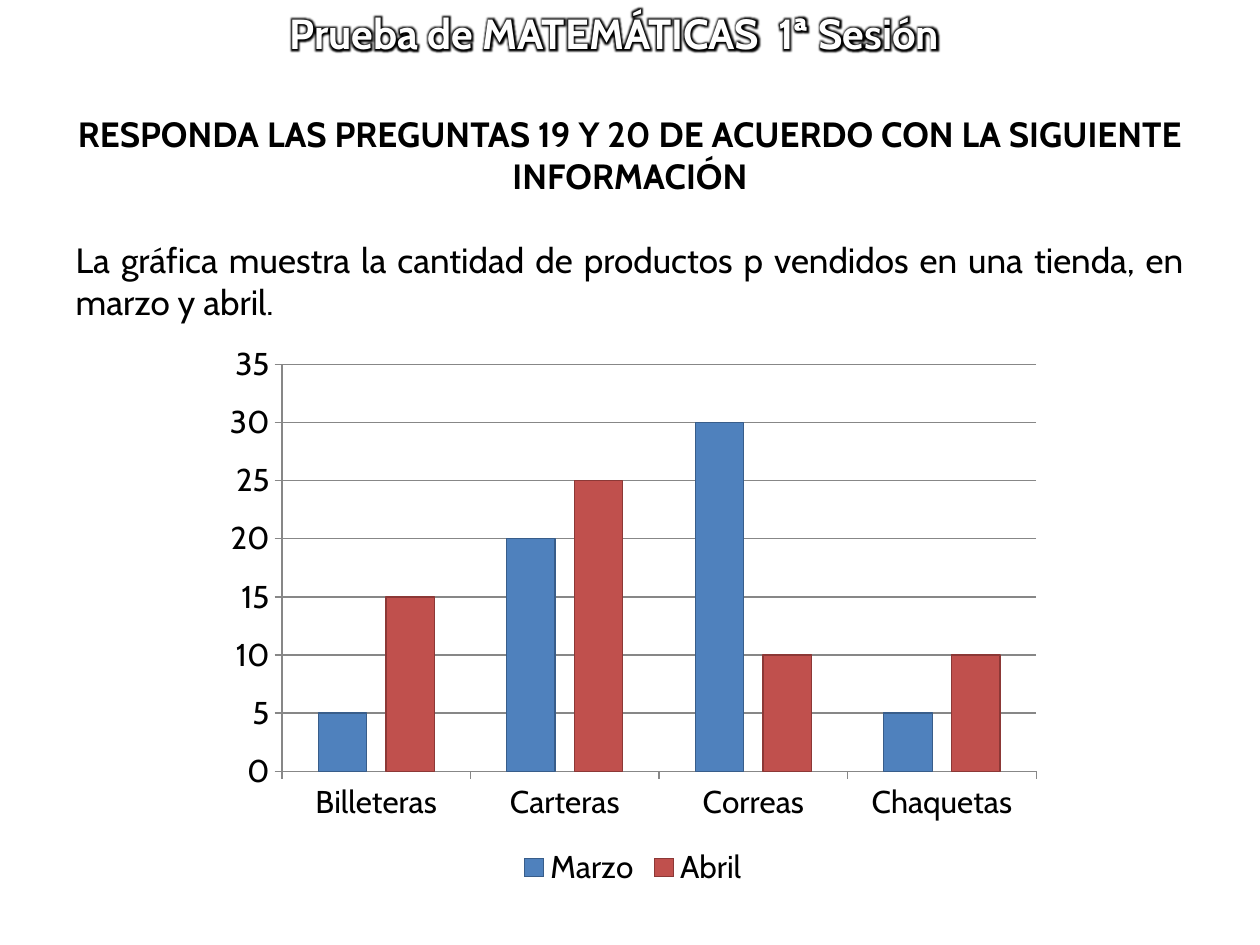
from lxml.etree import SubElement
from pptx import Presentation
from pptx.chart.data import CategoryChartData as ChartData
from pptx.dml.color import RGBColor
from pptx.enum.chart import XL_CHART_TYPE as ChartType
from pptx.enum.chart import XL_LEGEND_POSITION as LegendPosition
from pptx.enum.chart import XL_TICK_MARK as TickMark
from pptx.enum.text import MSO_ANCHOR as Anchor
from pptx.enum.text import MSO_AUTO_SIZE as AutoSize
from pptx.enum.text import PP_ALIGN as Align
from pptx.oxml import parse_xml
from pptx.oxml.ns import nsdecls, qn
from pptx.util import Emu, Pt

PX_PER_INCH = 126
FONT = "Cabin"
COLORS = {
    "white": "FFFFFF",
    "black": "000000",
    "grid": "878787",
    "march": "4F81BD",
    "march_edge": "385D8A",
    "april": "C0504D",
    "april_edge": "8C3836",
}
PRODUCTS = ["Billeteras", "Carteras", "Correas", "Chaquetas"]
SALES = [
    ("Marzo", [5, 20, 30, 5], "march"),
    ("Abril", [15, 25, 10, 10], "april"),
]


def px(length):
    return Emu(round(length * 914400 / PX_PER_INCH))


def color(name):
    return RGBColor.from_string(COLORS[name])


def format_font(font, size, color_name, bold=False):
    font.size = Pt(size)
    font.bold = bold
    font.color.rgb = color(color_name)
    font.name = FONT


def place(shape, left, top, width, height):
    shape.left, shape.top = px(left), px(top)
    shape.width, shape.height = px(width), px(height)


def prepare_frame(shape, anchor):
    frame = shape.text_frame
    frame.word_wrap = True
    frame.auto_size = AutoSize.NONE
    frame.vertical_anchor = anchor
    return frame


def add_run(paragraph, text, size, color_name, bold=False):
    run = paragraph.add_run()
    run.text = text
    format_font(run.font, size, color_name, bold)
    return run


def add_glow(run, radius, color_name):
    """Surround the letters of a run with a glow; radius in points."""
    glow = parse_xml(
        f'<a:effectLst {nsdecls("a")}><a:glow rad="{Pt(radius)}">'
        f'<a:srgbClr val="{COLORS[color_name]}"/></a:glow></a:effectLst>'
    )
    run.font._element.find(qn("a:solidFill")).addnext(glow)


def remove_bullet(paragraph):
    properties = paragraph._p.get_or_add_pPr()
    properties.set("marL", "0")
    properties.set("indent", "0")
    SubElement(properties, qn("a:buNone"))


def fill_title(shape):
    place(shape, 277, -11, 958, 87)
    paragraph = prepare_frame(shape, Anchor.MIDDLE).paragraphs[0]
    paragraph.alignment = Align.LEFT
    run = add_run(paragraph, "Prueba de MATEMÁTICAS  1ª Sesión", 24, "white", True)
    add_glow(run, 5, "black")


def fill_body(shape):
    place(shape, 63, 106, 1134, 238)
    frame = prepare_frame(shape, Anchor.TOP)
    instruction, statement = frame.paragraphs[0], frame.add_paragraph()
    content = [
        (instruction, Align.CENTER, 0, True,
         "RESPONDA LAS PREGUNTAS 19 Y 20 DE ACUERDO CON LA SIGUIENTE INFORMACIÓN"),
        (statement, Align.JUSTIFY, 24, False,
         "La gráfica muestra la cantidad de productos p vendidos en una tienda, "
         "en marzo y abril."),
    ]
    for paragraph, alignment, space_before, bold, text in content:
        remove_bullet(paragraph)
        paragraph.alignment = alignment
        paragraph.space_before = Pt(space_before)
        add_run(paragraph, text, 20, "black", bold)


def format_line(line, color_name):
    line.color.rgb = color(color_name)
    line.width = Pt(0.75)


def format_axis(axis):
    axis.major_tick_mark = TickMark.OUTSIDE
    axis.minor_tick_mark = TickMark.NONE
    format_line(axis.format.line, "grid")


def add_sales_chart(slide):
    data = ChartData()
    data.categories = PRODUCTS
    for month, values, _ in SALES:
        data.add_series(month, values)
    chart = slide.shapes.add_chart(
        ChartType.COLUMN_CLUSTERED, px(213), px(334), px(840), px(559), data
    ).chart
    format_font(chart.font, 18, "black")
    chart.has_title = False
    chart.has_legend = True
    chart.legend.position = LegendPosition.BOTTOM
    chart.legend.include_in_layout = False

    format_axis(chart.category_axis)
    value_axis = chart.value_axis
    format_axis(value_axis)
    value_axis.minimum_scale, value_axis.maximum_scale = 0, 35
    value_axis.major_unit = 5
    value_axis.has_major_gridlines = True
    format_line(value_axis.major_gridlines.format.line, "grid")

    plot = chart.plots[0]
    plot.vary_by_categories = False
    plot.gap_width, plot.overlap = 150, -40
    for series, (_, _, color_name) in zip(plot.series, SALES):
        series.format.fill.solid()
        series.format.fill.fore_color.rgb = color(color_name)
        format_line(series.format.line, f"{color_name}_edge")


def main():
    presentation = Presentation()
    presentation.slide_width, presentation.slide_height = px(1260), px(945)
    slide = presentation.slides.add_slide(presentation.slide_layouts[1])
    fill_title(slide.shapes.title)
    fill_body(slide.placeholders[1])
    add_sales_chart(slide)
    presentation.save("out.pptx")


if __name__ == "__main__":
    main()
